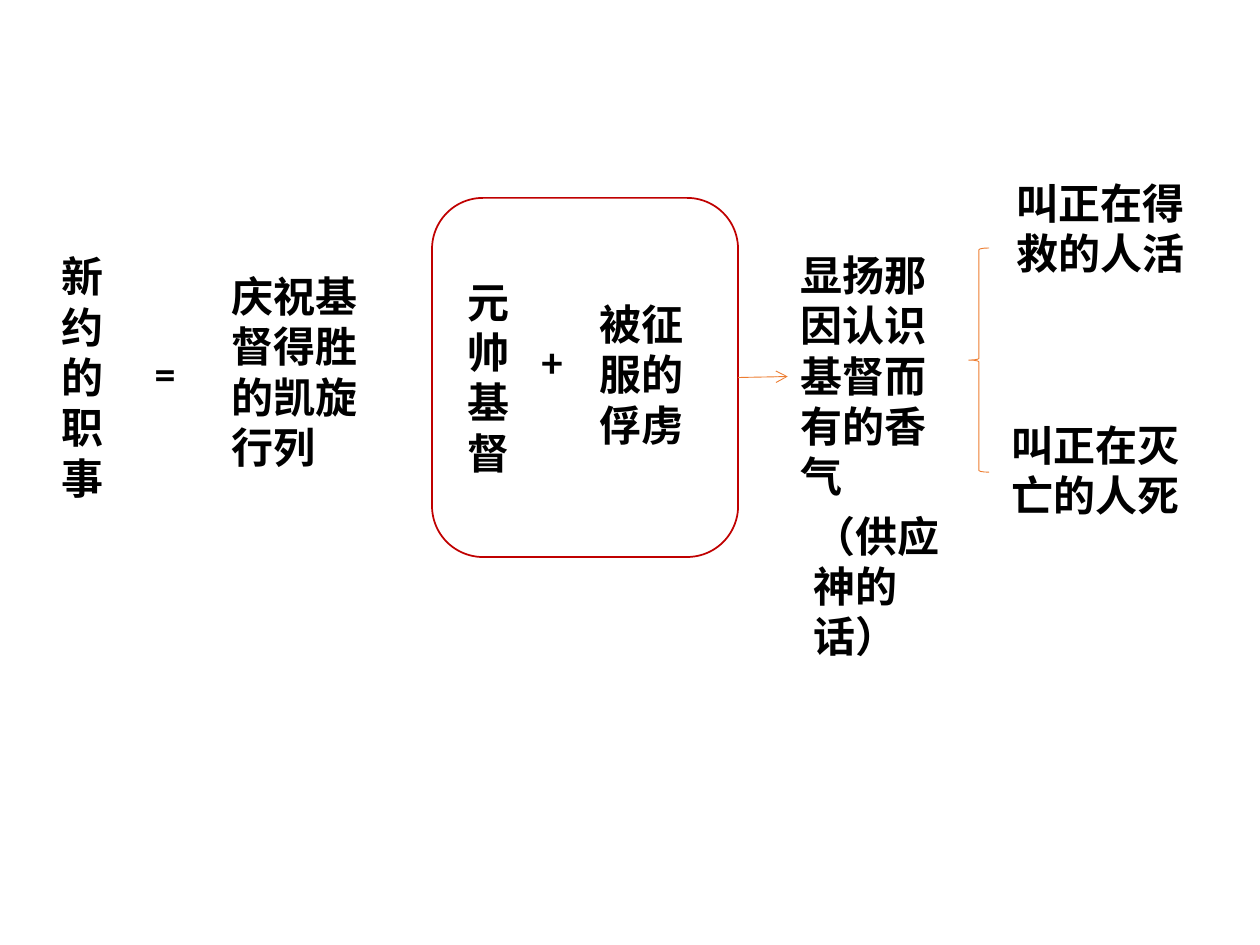
from lxml.etree import SubElement
from pptx import Presentation
from pptx.dml.color import RGBColor
from pptx.enum.shapes import MSO_CONNECTOR as CONN, MSO_SHAPE as SHAPE
from pptx.enum.text import MSO_AUTO_SIZE as AUTO
from pptx.oxml.ns import qn
from pptx.util import Cm, Pt

CJK = "Noto Sans CJK SC"


def color(value):
    return RGBColor.from_string(value)


def add_text(slide, text, box, name="Calibri", wrap=True):
    sp = slide.shapes.add_textbox(*map(Cm, box))
    tf = sp.text_frame
    tf.word_wrap = wrap
    tf.auto_size = AUTO.SHAPE_TO_FIT_TEXT
    r = tf.paragraphs[0].add_run()
    r.text = text
    for key, value in {"name": name, "size": Pt(24), "bold": True}.items():
        setattr(r.font, key, value)
    r.font.color.rgb = color("000000")
    SubElement(r._r.get_or_add_rPr(), qn("a:ea"), typeface=CJK)
    return sp


prs = Presentation()
prs.slide_width, prs.slide_height = Cm(25.4), Cm(19.05)
s = prs.slides.add_slide(prs.slide_layouts[6])

add_text(s, "新约的职事", (0.99, 4.93, 1.85, 5.38), name=CJK)
add_text(s, "=", (2.87, 6.88, 0.94, 1.27), wrap=False)
fragrance = add_text(s, "显扬那因认识基督而有的香气", (15.88, 4.9, 3.28, 5.38))
for text, box in [
    ("庆祝基督得胜的凯旋行列", (4.42, 5.33, 3.18, 4.37)),
    ("元帅基督", (9.17, 5.44, 1.27, 4.37)),
    ("+", (10.74, 6.63, 0.43, 1.27)),
    ("被征服的俘虏", (11.84, 5.89, 2.82, 3.33)),
    ("（供应神的话）", (16.15, 10.16, 3.48, 2.31)),
    ("叫正在得救的人活", (20.24, 3.45, 4.22, 2.31)),
    ("叫正在灭亡的人死", (20.14, 8.33, 4.42, 2.31)),
]:
    add_text(s, text, box)

outlines = []
for kind, box, line, width in [
    (SHAPE.ROUNDED_RECTANGLE, (8.71, 3.99, 6.17, 7.24), "C00000", 1),
    (SHAPE.LEFT_BRACE, (19.53, 5, 0.41, 4.52), "ED7D31", 0.5),
]:
    sp = s.shapes.add_shape(kind, *map(Cm, box))
    sp.shadow.inherit = False
    sp.fill.background()
    sp.line.color.rgb = color(line)
    sp.line.width = Pt(width)
    outlines.append(sp)
procession = outlines[0]

arrow = s.shapes.add_connector(CONN.STRAIGHT, Cm(14.88), Cm(7.61), Cm(15.88), Cm(7.59))
arrow.begin_connect(procession, 3)
arrow.end_connect(fragrance, 1)
arrow.line.color.rgb = color("ED7D31")
arrow.line.width = Pt(0.5)
SubElement(arrow.line._get_or_add_ln(), qn("a:tailEnd"), type="arrow")
SubElement(arrow._element.spPr, qn("a:effectLst"))

prs.save("out.pptx")
